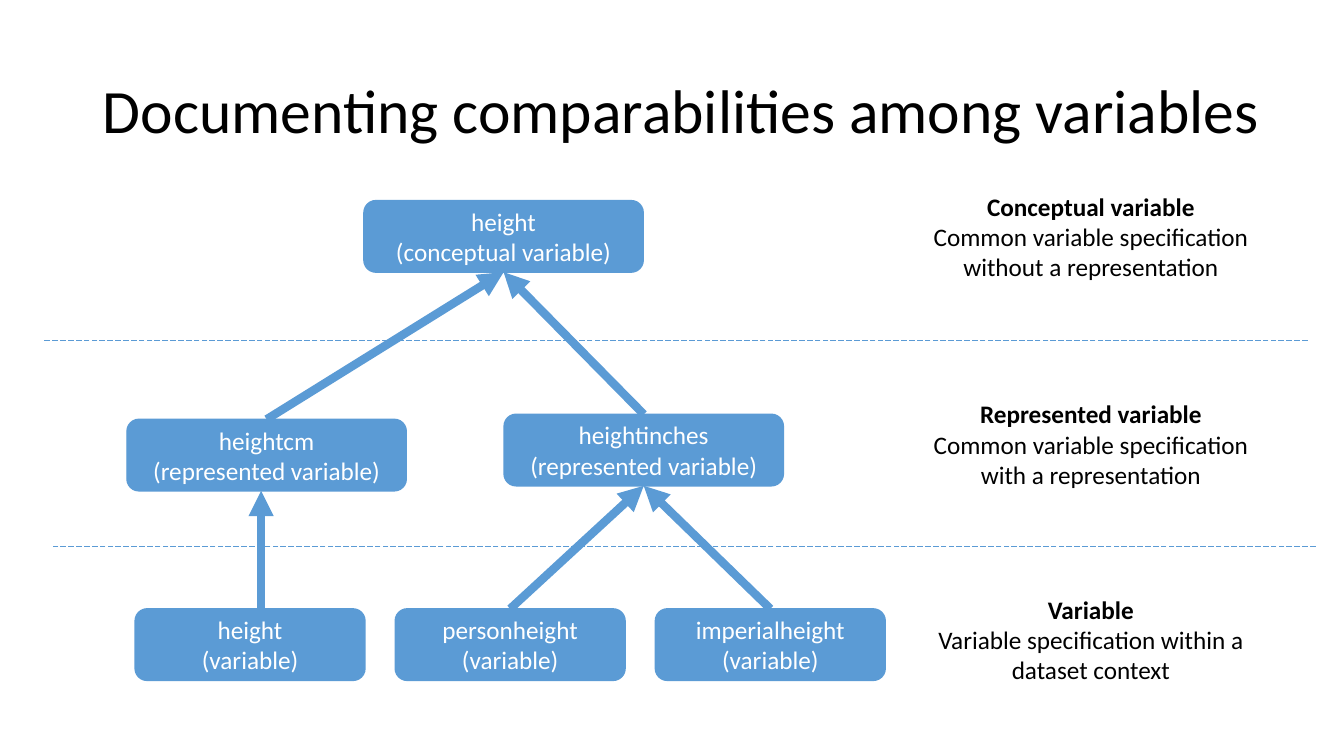
from pptx import Presentation
from pptx.dml.color import RGBColor
from pptx.enum.dml import MSO_LINE
from pptx.enum.shapes import MSO_CONNECTOR, MSO_SHAPE
from pptx.enum.text import MSO_ANCHOR, MSO_AUTO_SIZE, PP_ALIGN
from pptx.oxml.ns import qn
from pptx.util import Pt
from lxml import etree

STRAIGHT = MSO_CONNECTOR.STRAIGHT
ROUNDED = MSO_SHAPE.ROUNDED_RECTANGLE
LONG_DASH = MSO_LINE.LONG_DASH
MIDDLE = MSO_ANCHOR.MIDDLE
LEFT, CENTER = PP_ALIGN.LEFT, PP_ALIGN.CENTER
NO_FIT = MSO_AUTO_SIZE.NONE

BLUE = RGBColor(0x5B, 0x9B, 0xD5)
BLACK = RGBColor(0, 0, 0)
WHITE = RGBColor(255, 255, 255)
FONT = "Calibri"
PX = 9144  # 100 px to the inch
TOP_SITE, BOTTOM_SITE = 0, 2
BOX_HEIGHT = 71


def px(*lengths):
    return [length * PX for length in lengths]


def format_text(frame, size, color, align):
    frame.word_wrap = True
    frame.auto_size = NO_FIT
    frame.vertical_anchor = MIDDLE
    for paragraph in frame.paragraphs:
        paragraph.alignment = align
        for run in paragraph.runs:
            run.font.name = FONT
            run.font.size = Pt(size)
            run.font.color.rgb = color


def add_title(slide, box, wording):
    title = slide.shapes.title
    title.left, title.top, title.width, title.height = px(*box)
    title.text_frame.text = wording
    format_text(title.text_frame, 44, BLACK, LEFT)
    title.text_frame.paragraphs[0].line_spacing = 0.9


def add_variable(slide, box, name, kind):
    variable = slide.shapes.add_shape(ROUNDED, *px(*box))
    variable.shadow.inherit = False
    variable.fill.solid()
    variable.fill.fore_color.rgb = BLUE
    variable.line.color.rgb = BLUE
    variable.line.width = Pt(1)
    variable.text_frame.text = f"{name}\v({kind})"
    format_text(variable.text_frame, 18, WHITE, CENTER)
    return variable


def add_line(slide, ends, width):
    line = slide.shapes.add_connector(STRAIGHT, *px(*ends))
    line.line.color.rgb = BLUE
    line.line.width = Pt(width)
    etree.SubElement(line._element.spPr, qn("a:effectLst"))
    return line


def add_arrow(slide, ends=(0, 0, 0, 0)):
    arrow = add_line(slide, ends, 6)
    etree.SubElement(arrow.line._get_or_add_ln(), qn("a:tailEnd"), type="triangle")
    return arrow


def link(slide, child, parent):
    arrow = add_arrow(slide)
    arrow.begin_connect(child, TOP_SITE)
    arrow.end_connect(parent, BOTTOM_SITE)


def add_level_note(slide, box, heading, meaning):
    note = slide.shapes.add_textbox(*px(*box))
    note.text_frame.text = f"{heading}\n{meaning}"
    format_text(note.text_frame, 18, BLACK, CENTER)
    note.text_frame.paragraphs[0].runs[0].font.bold = True


def add_hierarchy(slide, left, top):
    def place(x, y, width, name, kind):
        return add_variable(slide, (left + x, top + y, width, BOX_HEIGHT), name, kind)

    # Conceptual and represented levels
    concept = place(235, 0, 277, "height", "conceptual variable")
    centimetres = place(0, 217, 277, "heightcm", "represented variable")
    inches = place(374, 212, 277, "heightinches", "represented variable")

    # Variables in a row with equal gaps
    names = ("height", "personheight", "imperialheight")
    _, person, imperial = [
        place(8 + 258 * i, 405, 228, name, "variable") for i, name in enumerate(names)
    ]

    # Arrows to the more general variable
    for child, parent in ((centimetres, concept), (inches, concept),
                          (person, inches), (imperial, inches)):
        link(slide, child, parent)
    add_arrow(slide, (left + 133, top + 411, left + 133, top + 288))


def add_levels(slide, left, width):
    notes = (
        (174, "Conceptual variable", "Common variable specification without a representation"),
        (380, "Represented variable", "Common variable specification with a representation"),
        (574, "Variable", "Variable specification within a dataset context"),
    )
    for top, heading, meaning in notes:
        add_level_note(slide, (left, top, width, 121), heading, meaning)

    # Dashed dividers between the levels
    for right, y in ((1297, 338), (1305, 542)):
        divider = add_line(slide, (right, y, right - 1254, y), 0.5)
        divider.line.dash_style = LONG_DASH


def main():
    deck = Presentation()
    deck.slide_width, deck.slide_height = px(1333, 750)
    slide = deck.slides.add_slide(deck.slide_layouts[5])
    add_title(slide, (92, 40, 1185, 145), "Documenting comparabilities among variables")
    add_hierarchy(slide, 126, 199)
    add_levels(slide, 909, 346)
    deck.save("out.pptx")


if __name__ == "__main__":
    main()
